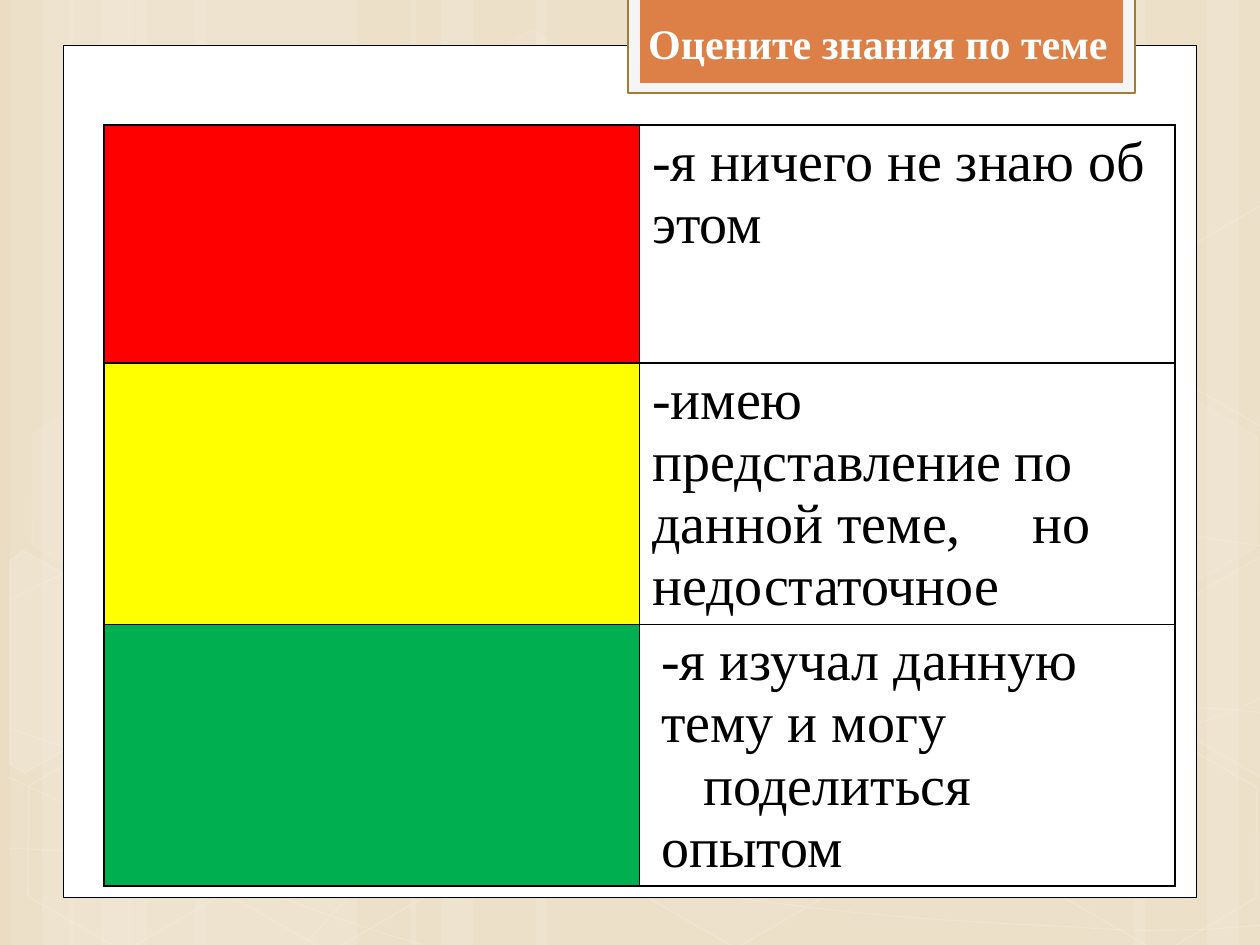
from pptx import Presentation
from pptx.dml.color import RGBColor
from pptx.enum.shapes import MSO_SHAPE as SHAPE
from pptx.enum.text import MSO_ANCHOR as ANCHOR, PP_ALIGN as ALIGN
from pptx.oxml.ns import qn
from pptx.util import Emu, Pt
from lxml.etree import SubElement

SCALE = 914400 / 126
WIDTH, HEIGHT = 1260, 945
FONT = "Times New Roman"
SAND = RGBColor(0xEB, 0xDD, 0xC3)
WHITE = RGBColor(0xFF, 0xFF, 0xFF)
BLACK = RGBColor(0x00, 0x00, 0x00)
PALE = RGBColor(0xF5, 0xF5, 0xF5)
BRONZE = RGBColor(0xA1, 0x7C, 0x36)
ORANGE = RGBColor(0xDD, 0x80, 0x47)
RED = RGBColor(0xFF, 0x00, 0x00)
YELLOW = RGBColor(0xFF, 0xFF, 0x00)
GREEN = RGBColor(0x00, 0xB0, 0x50)

# Backdrop: stripes (left, width)
STRIPES = [(136, 221), (10, 63), (42, 105), (195, 221), (69, 63), (101, 105),
           (924, 221), (1207, 63), (1134, 105), (536, 388), (410, 63), (441, 105)]
# Hexagons (left, top, fill opacity, line opacity)
HEXAGONS = [(421, 45, 4, 8), (626, 742, 6, 12), (14, 745, 0, 12),
            (18, 393, 7, 8), (219, 746, 0, 12), (949, 571, 10, 12),
            (1051, 747, 0, 12), (1051, 396, 7, 8)]
# Hexagons cut by the slide edge, before turning (left, top, corners, fill opacity)
LEFT_CUT = [(0, 15), (7, 0), (119, 0), (174, 97), (119, 192), (102, 192)]
RIGHT_CUT = [(0, 95), (54, 0), (66, 0), (171, 182), (166, 192), (55, 192)]
CUT_HEXAGONS = [(-42, 578, LEFT_CUT, 10), (1155, 559, RIGHT_CUT, 4),
                (1155, 208, RIGHT_CUT, 0)]
# Waves: a start, then two control points and an end for each Bezier piece
WAVES = [
    [(9, 848), (77, 852), (145, 856), (239, 854), (334, 853), (451, 851), (577, 838),
     (703, 825), (882, 801), (998, 777), (1113, 753), (1231, 716), (1269, 694)],
    [(9, 601), (45, 582), (82, 562), (152, 543), (224, 524), (326, 496), (437, 488),
     (549, 479), (685, 478), (824, 488), (963, 497), (1193, 537), (1269, 547)],
    [(8, 777), (160, 847), (311, 916), (421, 944)],
    [(9, 728), (48, 742), (88, 756), (161, 776), (234, 795), (344, 827), (450, 848),
     (554, 869), (687, 892), (791, 905), (896, 919), (1008, 924), (1075, 927),
     (1140, 932), (1158, 930), (1191, 930), (1223, 929), (1246, 926), (1269, 925)],
    [(305, 944), (328, 919), (350, 893), (381, 871), (411, 848), (454, 823), (489, 805),
     (524, 787), (546, 780), (592, 767), (638, 755), (722, 737), (766, 728),
     (811, 719), (818, 719), (857, 717), (896, 713), (958, 709), (1000, 708),
     (1045, 707), (1116, 708), (1116, 708), (1144, 708), (1173, 708), (1201, 708),
     (1223, 709), (1245, 711), (1256, 712), (1268, 713), (1264, 712), (1268, 713)]]

# Table rows: height, colour, indent, spans as (text, letter spacing), None for a line break
ROWS = [
    (238, RED, 0, [("-я ничего не знаю об этом", 0)]),
    (258, YELLOW, 0, [("-имею представление по данной теме,", 0), (" ", 57),
                      ("но недостаточное", 0)]),
    (234, GREEN, 9, [("-я изучал данную тему и могу", 0), None, (" ", 28),
                     ("поделиться опытом", 0)])]


def px(length):
    return Emu(round(length * SCALE))


def set_opacity(color_format, percent):
    color = color_format._xFill.find(qn("a:srgbClr"))
    SubElement(color, qn("a:alpha")).set("val", str(percent * 1000))


def paint(shape, fill=None, line=None, weight=1, opacity=100, line_opacity=100):
    shape.shadow.inherit = False
    if fill is None or opacity == 0:
        shape.fill.background()
    else:
        shape.fill.solid()
        shape.fill.fore_color.rgb = fill
        if opacity < 100:
            set_opacity(shape.fill.fore_color, opacity)
    if line is None:
        shape.line.fill.background()
    else:
        shape.line.color.rgb = line
        shape.line.width = Pt(weight)
        if line_opacity < 100:
            set_opacity(shape.line.color, line_opacity)


def add_preset(shapes, kind, box, **look):
    shape = shapes.add_shape(kind, *map(px, box))
    paint(shape, **look)
    return shape


def add_outline(shapes, points, close, **look):
    builder = shapes.build_freeform(*points[0], scale=SCALE)
    builder.add_line_segments(points[1:], close=close)
    shape = builder.convert_to_shape()
    paint(shape, **look)
    return shape


def bend(shape):
    """Turn each three line pieces of an outline into one Bezier piece."""
    lines = list(shape._element.iter(qn("a:lnTo")))
    for i in range(0, len(lines), 3):
        curve = lines[i].makeelement(qn("a:cubicBezTo"), {})
        lines[i].addprevious(curve)
        for line in lines[i:i + 3]:
            curve.append(line[0])
            line.getparent().remove(line)


def write(para, spans, size, color, bold=False, align=None, margin=0):
    para.alignment = align
    if margin:
        settings = para._p.get_or_add_pPr()
        settings.set("marL", str(px(margin)))
        settings.set("indent", "0")
    for part in spans:
        if part is None:
            para.add_line_break()
            continue
        text, spacing = part
        span = para.add_run()
        span.text = text
        span.font.name, span.font.size, span.font.bold = FONT, Pt(size), bold
        span.font.color.rgb = color
        if spacing:
            span._r.get_or_add_rPr().set("spc", str(round(px(spacing).pt * 100)))


def build_backdrop(page, box):
    left, top, _, height = box
    shapes = page.shapes.add_group_shape().shapes

    def shift(points, x=0, y=0):
        return [(left + x + dx, top + y + dy) for dx, dy in points]

    for x, width in STRIPES:
        add_preset(shapes, SHAPE.RECTANGLE, (left + x, top, width, height),
                   fill=WHITE, opacity=10)
    for knots in WAVES:
        bend(add_outline(shapes, shift(knots), False,
                         line=WHITE, weight=0.5, line_opacity=20))
    for x, y, opacity, line_opacity in HEXAGONS:
        hexagon = add_preset(shapes, SHAPE.HEXAGON, (left + x, top + y, 220, 192), fill=WHITE,
                             line=WHITE, opacity=opacity, line_opacity=line_opacity)
        hexagon.adjustments[0] = 0.285
        hexagon.rotation = 30
    for x, y, corners, opacity in CUT_HEXAGONS:
        hexagon = add_outline(shapes, shift(corners, x, y), True, fill=WHITE, line=WHITE,
                              opacity=opacity, line_opacity=12)
        hexagon.rotation = 30


def build_heading(page, box):
    left, top, width, height = box
    add_preset(page.shapes, SHAPE.RECTANGLE, box, fill=PALE, line=BRONZE, weight=1.25)
    add_preset(page.shapes, SHAPE.RECTANGLE, (left + 12, top, width - 24, height - 10),
               fill=ORANGE)
    title = page.shapes.title
    title.left, title.top, title.width, title.height = map(
        px, (left + 2, top + 3, width - 11, height - 10))
    title.text_frame.vertical_anchor = ANCHOR.MIDDLE
    write(title.text_frame.paragraphs[0], [("Оцените знания по теме", 0)], 24, WHITE,
          bold=True, align=ALIGN.CENTER)
    page.shapes._spTree.append(title._element)  # bring the title to the front


def set_borders(cell):
    settings = cell._tc.get_or_add_tcPr()
    for i, side in enumerate(("lnL", "lnR", "lnT", "lnB")):
        border = settings.makeelement(qn("a:" + side), {"w": str(Pt(1))})
        settings.insert(i, border)
        fill = SubElement(border, qn("a:solidFill"))
        SubElement(fill, qn("a:srgbClr"), val=str(BLACK))


def build_table(page, box):
    table = page.shapes.add_table(len(ROWS), 2, *map(px, box)).table
    table.first_row = table.horz_banding = False
    for column in table.columns:
        column.width = px(box[2] / 2)
    for row, (height, color, margin, spans) in zip(table.rows, ROWS):
        row.height = px(height)
        swatch, answer = row.cells
        swatch.fill.solid()
        swatch.fill.fore_color.rgb = color
        answer.fill.background()
        write(answer.text_frame.paragraphs[0], spans, 32, BLACK, margin=margin)
        for cell in (swatch, answer):
            set_borders(cell)


def main():
    deck = Presentation()
    deck.slide_width, deck.slide_height = px(WIDTH), px(HEIGHT)
    page = deck.slides.add_slide(deck.slide_layouts[5])
    page.background.fill.solid()
    page.background.fill.fore_color.rgb = SAND
    build_backdrop(page, (0, 0, WIDTH, HEIGHT))
    # White sheet
    add_preset(page.shapes, SHAPE.RECTANGLE, (63, 45, 1134, 853),
               fill=WHITE, line=BLACK, weight=0.5)
    build_heading(page, (628, -3, 507, 96))
    build_table(page, (104, 125, 1071, sum(row[0] for row in ROWS)))
    deck.save("out.pptx")


if __name__ == "__main__":
    main()
